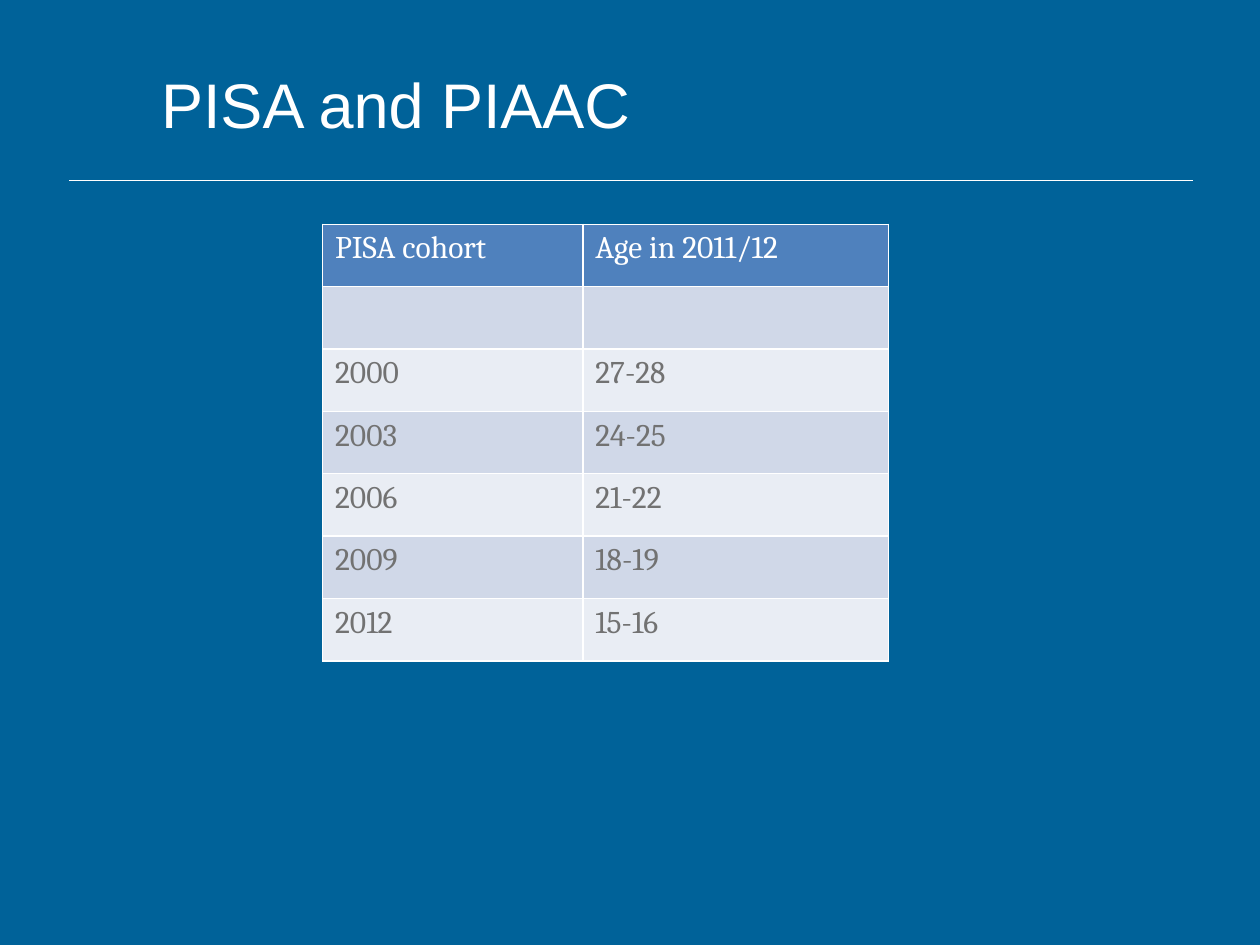
from dataclasses import dataclass

from lxml import etree
from pptx import Presentation
from pptx.dml.color import RGBColor
from pptx.enum.shapes import MSO_CONNECTOR
from pptx.enum.text import MSO_ANCHOR
from pptx.oxml.ns import qn
from pptx.util import Inches, Pt

LINE = MSO_CONNECTOR.STRAIGHT
MIDDLE = MSO_ANCHOR.MIDDLE
WIDE, HIGH = Inches(10), Inches(7.5)


@dataclass(frozen=True)
class Theme:
    back: str = "006299"
    white: str = "FFFFFF"
    grey: str = "727272"
    head: str = "4F81BD"
    bands: tuple = ("D0D8E8", "E9EDF4")
    sans: str = "Arial"
    serif: str = "Cambria"
    title: int = 36
    body: int = 18
    rule: float = 0.5
    edge: int = 1


THEME = Theme()
ROWS = (
    ("PISA cohort", "Age in 2011/12"),
    ("", ""),
    ("2000", "27-28"),
    ("2003", "24-25"),
    ("2006", "21-22"),
    ("2009", "18-19"),
    ("2012", "15-16"),
)
SHARES = (0.46, 0.54)


def area(left, top, width, height):
    return (
        int(WIDE * left / 100),
        int(HIGH * top / 100),
        int(WIDE * width / 100),
        int(HIGH * height / 100),
    )


def style(para, name, size, color):
    font = para.font
    font.name, font.size, font.bold = name, Pt(size), False
    font.color.rgb = RGBColor.from_string(color)


def add_title(slide, box, text):
    shape = slide.shapes.add_textbox(*box)
    frame = shape.text_frame
    frame.word_wrap = True
    frame.vertical_anchor = MIDDLE
    frame.text = text
    style(frame.paragraphs[0], THEME.sans, THEME.title, THEME.white)


def add_rule(slide, box):
    left, top, width, height = box
    rule = slide.shapes.add_connector(LINE, left, top, left + width, top + height)
    rule.line.color.rgb = RGBColor.from_string(THEME.white)
    rule.line.width = Pt(THEME.rule)
    props = rule._element.spPr
    etree.SubElement(props, qn("a:effectLst"))


def add_edges(cell):
    props = cell._tc.get_or_add_tcPr()
    for place, side in enumerate(("lnL", "lnR", "lnT", "lnB")):
        edge = etree.Element(qn(f"a:{side}"), w=str(Pt(THEME.edge)))
        fill = etree.SubElement(edge, qn("a:solidFill"))
        etree.SubElement(fill, qn("a:srgbClr"), val=THEME.white)
        props.insert(place, edge)


def add_ages(slide, box, rows):
    table = slide.shapes.add_table(len(rows), len(SHARES), *box).table
    for column, share in zip(table.columns, SHARES):
        column.width = int(box[2] * share)
    for r, row in enumerate(rows):
        fill = THEME.bands[(r - 1) % 2] if r else THEME.head
        color = THEME.grey if r else THEME.white
        for c, text in enumerate(row):
            cell = table.cell(r, c)
            cell.text = text
            cell.fill.solid()
            cell.fill.fore_color.rgb = RGBColor.from_string(fill)
            style(cell.text_frame.paragraphs[0], THEME.serif, THEME.body, color)
            add_edges(cell)


def main():
    deck = Presentation()
    deck.slide_width, deck.slide_height = WIDE, HIGH
    slide = deck.slides.add_slide(deck.slide_layouts[6])
    slide.background.fill.solid()
    slide.background.fill.fore_color.rgb = RGBColor.from_string(THEME.back)
    add_rule(slide, area(5.5, 19.07, 89.2, 0))
    add_title(slide, area(11.8, 3.47, 81.1, 14.93), "PISA and PIAAC")
    add_ages(slide, area(25.6, 23.73, 44.9, 46.2), ROWS)
    deck.save("out.pptx")


if __name__ == "__main__":
    main()
